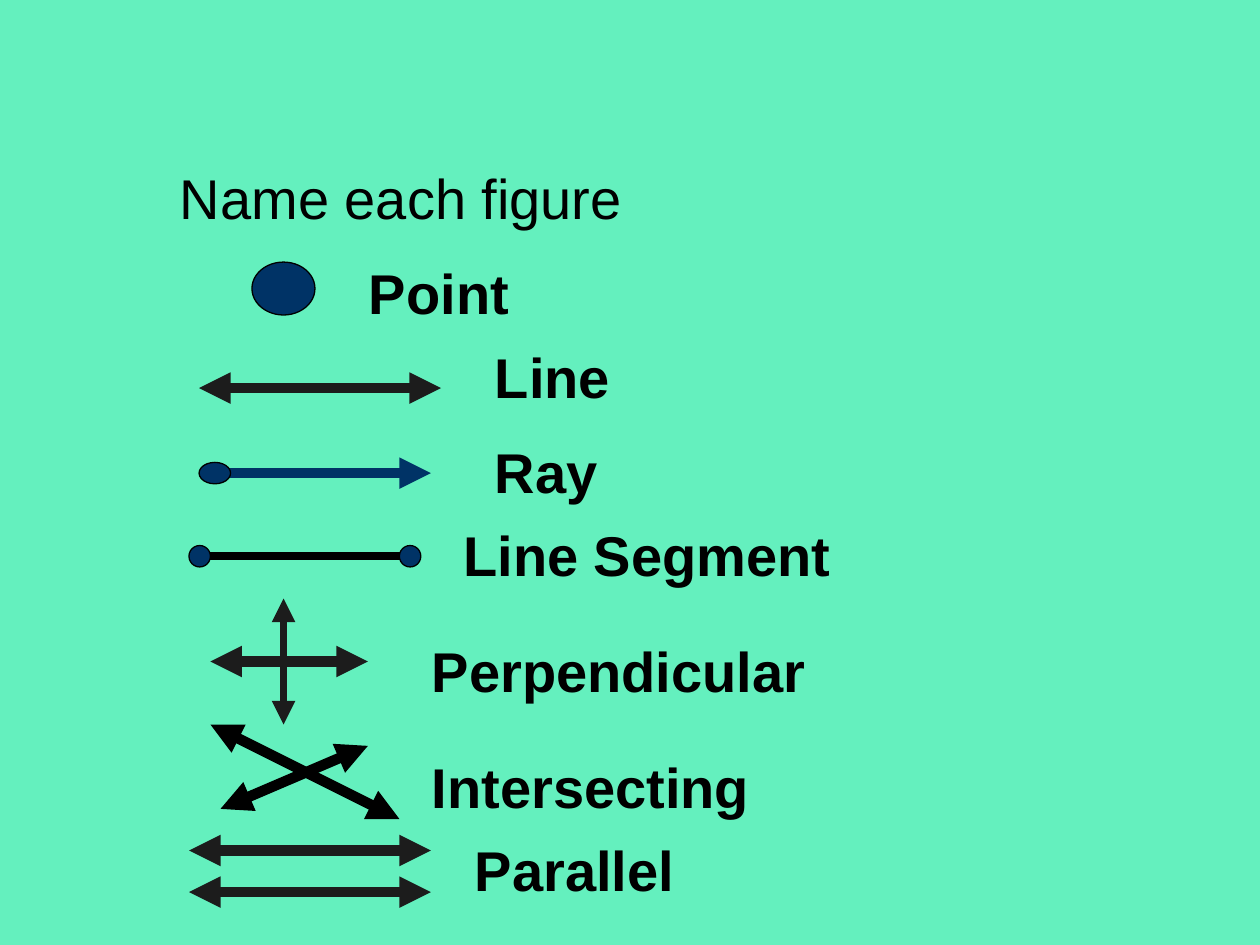
from lxml import etree
from pptx import Presentation
from pptx.dml.color import RGBColor
from pptx.enum.shapes import MSO_CONNECTOR as Conn, MSO_SHAPE as Shape
from pptx.enum.text import MSO_AUTO_SIZE as Fit
from pptx.oxml.ns import qn
from pptx.util import Inches, Pt

BLACK, DARK, NAVY, MINT = "000000", "1C1C1C", "003366", "64F0BE"


def color(code):
    return RGBColor.from_string(code)


def text(slide, words, left, top, width, height=0.63, size=32, bold=True):
    box = slide.shapes.add_textbox(
        Inches(left), Inches(top), Inches(width), Inches(height))
    frame = box.text_frame
    frame.word_wrap = True
    frame.auto_size = Fit.SHAPE_TO_FIT_TEXT
    run = frame.paragraphs[0].add_run()
    run.text = words
    run.font.name = "Arial"
    run.font.size = Pt(size)
    run.font.bold = bold
    run.font.color.rgb = color(BLACK)


def dot(group, left, top, width, height):
    oval = group.shapes.add_shape(
        Shape.OVAL, Inches(left), Inches(top), Inches(width), Inches(height))
    oval.shadow.inherit = False
    oval.fill.solid()
    oval.fill.fore_color.rgb = color(NAVY)
    oval.line.color.rgb = color(BLACK)
    oval.line.width = Pt(0.75)


def line(group, start, end, ink=DARK, width=6, ends=("headEnd", "tailEnd")):
    rule = group.shapes.add_connector(
        Conn.STRAIGHT, *(Inches(v) for v in (*start, *end)))
    rule.line.color.rgb = color(ink)
    rule.line.width = Pt(width)
    stroke = rule.line._get_or_add_ln()
    for tag in ends:
        etree.SubElement(stroke, qn(f"a:{tag}"), type="triangle")
    etree.SubElement(rule._element.spPr, qn("a:effectLst"))


# Each figure fills the box given by left, top, width and height
def point(slide, x, y, w, h):
    dot(slide, x, y, w, h)


def arrow(slide, x, y, w, h):
    line(slide, (x, y + h / 2), (x + w, y + h / 2))


def ray(slide, x, y, w, h):
    group = slide.shapes.add_group_shape()
    mid = y + h / 2
    line(group, (x + 0.09, mid), (x + w, mid), ink=NAVY, ends=["tailEnd"])
    dot(group, x, y, 0.25, h)


def segment(slide, x, y, w, h):
    group = slide.shapes.add_group_shape()
    mid = y + h / 2
    line(group, (x + h / 2, mid), (x + w - h / 2, mid),
         ink=BLACK, width=4.5, ends=[])
    for left in (x, x + w - h):
        dot(group, left, y, h, h)


def cross(slide, x, y, w, h):
    group = slide.shapes.add_group_shape()
    line(group, (x + 0.58, y), (x + 0.58, y + h), width=4.5)
    line(group, (x, y + h / 2), (x + w, y + h / 2))


def meet(slide, x, y, w, h):
    group = slide.shapes.add_group_shape()
    line(group, (x + 0.08, y + 0.67), (x + 1.25, y + 0.17), ink=BLACK)
    line(group, (x, y), (x + w, y + h), ink=BLACK)


def pair(slide, x, y, w, h):
    group = slide.shapes.add_group_shape()
    for level in (y, y + h):
        line(group, (x, level), (x + w, level))


# Figure, its box, then label with left, top and width
ROWS = [
    (point, (2, 2.08, 0.5, 0.42), ("Point", 2.83, 2, 3.08)),
    (arrow, (1.58, 3, 1.92, 0.16), ("Line", 3.83, 2.67, 2.25)),
    (ray, (1.58, 3.67, 1.84, 0.17), ("Ray", 3.83, 3.42, 1.58)),
    (segment, (1.5, 4.33, 1.84, 0.17), ("Line Segment", 3.58, 4.08, 3.58)),
    (cross, (1.67, 4.75, 1.25, 1), ("Perpendicular", 3.33, 5, 3.17)),
    (meet, (1.67, 5.75, 1.5, 0.75), ("Intersecting", 3.33, 5.92, 2.83)),
    (pair, (1.5, 6.75, 1.92, 0.33), ("Parallel", 3.67, 6.58, 2.83)),
]


def main():
    deck = Presentation()
    deck.slide_width, deck.slide_height = Inches(10), Inches(7.5)
    slide = deck.slides.add_slide(deck.slide_layouts[6])
    slide.background.fill.solid()
    slide.background.fill.fore_color.rgb = color(MINT)

    # Heading, then one figure and label per row
    text(slide, "Name each figure", 1.33, 1.25, 7.83, bold=False)
    for draw, box, label in ROWS:
        draw(slide, *box)
        text(slide, *label)
    deck.save("out.pptx")


if __name__ == "__main__":
    main()
